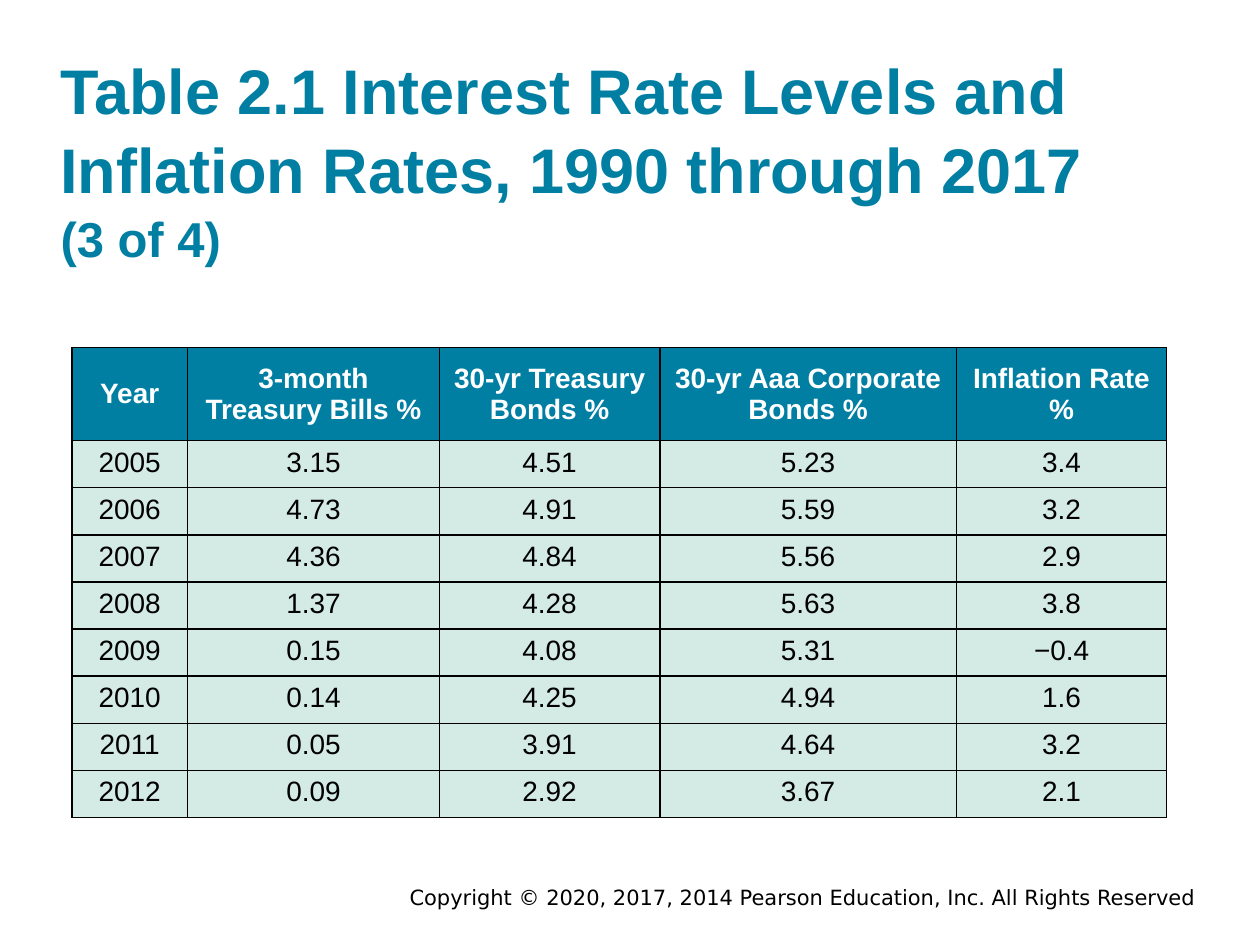
from dataclasses import dataclass

from lxml.etree import SubElement
from pptx import Presentation
from pptx.dml.color import RGBColor as Rgb
from pptx.enum.text import MSO_ANCHOR as Anchor, PP_ALIGN as Align
from pptx.oxml.ns import qn
from pptx.util import Cm, Pt


@dataclass(frozen=True)
class Theme:
    teal: str = "007FA3"
    mint: str = "D4EAE4"
    black: str = "000000"
    white: str = "FFFFFF"
    main_font: str = "Arial"
    footer_font: str = "DejaVu Sans"
    title_size: int = 36
    part_size: int = 28
    table_size: int = 16
    footer_size: int = 12
    border_width: int = 1


HEADINGS = ["Year", "3-month Treasury Bills %", "30-yr Treasury Bonds %",
            "30-yr Aaa Corporate Bonds %", "Inflation Rate %"]
RATES = [
    ["2005", "3.15", "4.51", "5.23", "3.4"],
    ["2006", "4.73", "4.91", "5.59", "3.2"],
    ["2007", "4.36", "4.84", "5.56", "2.9"],
    ["2008", "1.37", "4.28", "5.63", "3.8"],
    ["2009", "0.15", "4.08", "5.31", "−0.4"],
    ["2010", "0.14", "4.25", "4.94", "1.6"],
    ["2011", "0.05", "3.91", "4.64", "3.2"],
    ["2012", "0.09", "2.92", "3.67", "2.1"],
]
COLUMN_WIDTHS = [2.33, 5.08, 4.44, 5.98, 4.24]
HEADING_HEIGHT, RATE_HEIGHT = 1.87, 0.95


class SlideBuilder:
    """Draws styled elements on the current slide."""

    def __init__(self, slide, theme):
        self.slide = slide
        self.theme = theme

    def style(self, run, size, color, bold=False, font=None):
        run.font.name = font or self.theme.main_font
        run.font.size = Pt(size)
        run.font.bold = bold
        run.font.color.rgb = Rgb.from_string(color)

    def title(self, heading, part, left, top, width, height):
        title = self.slide.shapes.title
        title.left, title.top, title.width, title.height = map(Cm, (left, top, width, height))
        frame = title.text_frame
        frame.margin_left = frame.margin_top = frame.margin_bottom = 0
        frame.margin_right = Cm(0.25)
        frame.vertical_anchor = Anchor.BOTTOM
        frame.text = heading
        line = frame.paragraphs[0]
        line.alignment = Align.LEFT
        line.line_spacing = 1.04
        line.add_run().text = part
        for run, size in zip(line.runs, (self.theme.title_size, self.theme.part_size)):
            self.style(run, size, self.theme.teal, bold=True)

    def footer(self, notice, left, top, width, height):
        footer = self.slide.shapes.add_textbox(*map(Cm, (left, top, width, height)))
        frame = footer.text_frame
        frame.word_wrap = True
        frame.text = notice
        line = frame.paragraphs[0]
        line.alignment = Align.RIGHT
        self.style(line.runs[0], self.theme.footer_size, self.theme.black,
                   font=self.theme.footer_font)

    def borders(self, cell):
        properties = cell._tc.get_or_add_tcPr()
        for position, side in enumerate(("lnL", "lnR", "lnT", "lnB")):
            border = SubElement(properties, qn(f"a:{side}"), w=str(Pt(self.theme.border_width)))
            fill = SubElement(border, qn("a:solidFill"))
            SubElement(fill, qn("a:srgbClr"), val=self.theme.black)
            properties.insert(position, border)

    def cell(self, cell, wording, heading):
        theme = self.theme
        cell.text = wording
        cell.vertical_anchor = Anchor.MIDDLE if heading else Anchor.TOP
        cell.fill.solid()
        cell.fill.fore_color.rgb = Rgb.from_string(theme.teal if heading else theme.mint)
        line = cell.text_frame.paragraphs[0]
        line.alignment = Align.CENTER
        self.style(line.runs[0], theme.table_size,
                   theme.white if heading else theme.black, bold=heading)
        self.borders(cell)

    def table(self, rows, widths, heights, left, top):
        extent = map(Cm, (left, top, sum(widths), sum(heights)))
        table = self.slide.shapes.add_table(len(rows), len(widths), *extent).table
        table.horz_banding = False
        for column, width in zip(table.columns, widths):
            column.width = Cm(width)
        for index, (wordings, height) in enumerate(zip(rows, heights)):
            table.rows[index].height = Cm(height)
            for cell, wording in zip(table.rows[index].cells, wordings):
                self.cell(cell, wording, heading=index == 0)


def main():
    deck = Presentation()
    deck.slide_width, deck.slide_height = Cm(25.4), Cm(19.05)
    builder = SlideBuilder(deck.slides.add_slide(deck.slide_layouts[5]), Theme())
    builder.title("Table 2.1 Interest Rate Levels and Inflation Rates, 1990 through 2017 ",
                  "(3 of 4)", 1.22, 1.12, 21.82, 4.27)
    builder.table([HEADINGS, *RATES], COLUMN_WIDTHS,
                  [HEADING_HEIGHT] + [RATE_HEIGHT] * len(RATES), 1.45, 7.01)
    builder.footer("Copyright © 2020, 2017, 2014 Pearson Education, Inc. All Rights Reserved",
                   4.47, 17.7, 19.89, 0.76)
    deck.save("out.pptx")


if __name__ == "__main__":
    main()
